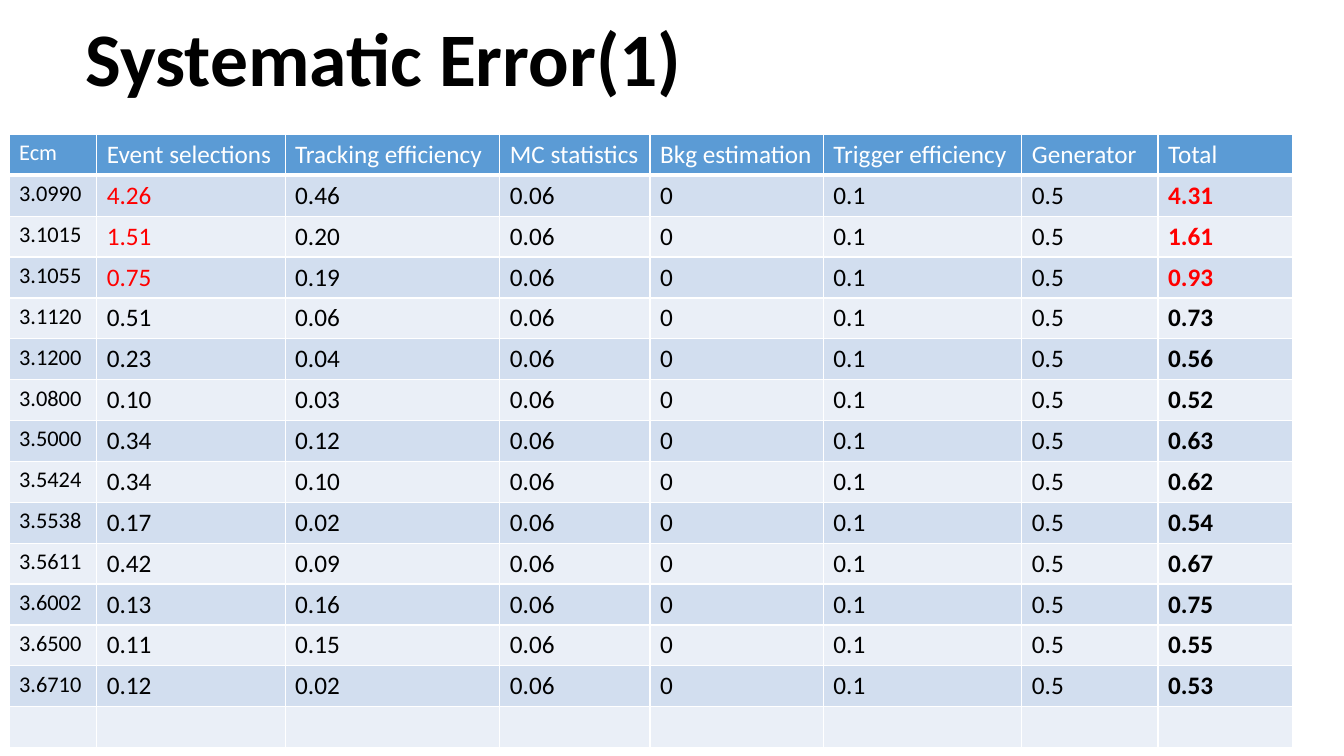
from lxml.etree import SubElement
from pptx import Presentation
from pptx.dml.color import RGBColor
from pptx.enum.text import MSO_ANCHOR as Anchor, PP_ALIGN as Align
from pptx.oxml.ns import qn
from pptx.util import Pt

WHITE = RGBColor(0xFF, 0xFF, 0xFF)
BLACK = RGBColor(0, 0, 0)
RED = RGBColor(0xFF, 0, 0)
HEADER_BLUE = RGBColor(0x5B, 0x9B, 0xD5)
BAND_DARK = RGBColor(0xD2, 0xDE, 0xEF)
BAND_LIGHT = RGBColor(0xEA, 0xEF, 0xF7)

COLUMNS = [
    ("Ecm", 62.6), ("Event selections", 134.6), ("Tracking efficiency", 153.4),
    ("MC statistics", 107.3), ("Bkg estimation", 123.8),
    ("Trigger efficiency", 141.8), ("Generator", 97.2), ("Total", 96.5),
]
COMMON_ERRORS = ["0.06", "0", "0.1", "0.5"]
ENERGY_POINTS = [
    ("3.0990", "4.26", "0.46", "4.31"),
    ("3.1015", "1.51", "0.20", "1.61"),
    ("3.1055", "0.75", "0.19", "0.93"),
    ("3.1120", "0.51", "0.06", "0.73"),
    ("3.1200", "0.23", "0.04", "0.56"),
    ("3.0800", "0.10", "0.03", "0.52"),
    ("3.5000", "0.34", "0.12", "0.63"),
    ("3.5424", "0.34", "0.10", "0.62"),
    ("3.5538", "0.17", "0.02", "0.54"),
    ("3.5611", "0.42", "0.09", "0.67"),
    ("3.6002", "0.13", "0.16", "0.75"),
    ("3.6500", "0.11", "0.15", "0.55"),
    ("3.6710", "0.12", "0.02", "0.53"),
]
HIGHLIGHTED_ROWS = range(1, 4)
ECM, SELECTION, TOTAL = 0, 1, len(COLUMNS) - 1


def write(frame, text, size=18, color=BLACK, bold=False, spacing=1.0):
    paragraph = frame.paragraphs[0]
    paragraph.alignment = Align.LEFT
    paragraph.line_spacing = spacing
    run = paragraph.add_run()
    run.text = text
    font = run.font
    font.name, font.size, font.bold = "Calibri", Pt(size), bold
    font.color.rgb = color


def add_borders(cell, top=1, bottom=1):
    properties = cell._tc.get_or_add_tcPr()
    for side, width in (("L", 1), ("R", 1), ("T", top), ("B", bottom)):
        line = SubElement(properties, qn(f"a:ln{side}"), w=str(Pt(width)))
        fill = SubElement(line, qn("a:solidFill"))
        SubElement(fill, qn("a:srgbClr"), val=str(WHITE))


def place_title(slide, left, top, width, height):
    title = slide.shapes.title
    title.left, title.top = Pt(left), Pt(top)
    title.width, title.height = Pt(width), Pt(height)
    title.text_frame.vertical_anchor = Anchor.MIDDLE
    write(title.text_frame, "Systematic Error(1)", size=54, bold=True, spacing=0.9)


def place_error_table(slide, left, top, width, height):
    rows = [[heading for heading, _ in COLUMNS]]
    rows += [[ecm, selection, tracking, *COMMON_ERRORS, total]
             for ecm, selection, tracking, total in ENERGY_POINTS]
    rows.append([""] * len(COLUMNS))
    table = slide.shapes.add_table(
        len(rows), len(COLUMNS), Pt(left), Pt(top), Pt(width), Pt(height)).table
    for column, (_, column_width) in zip(table.columns, COLUMNS):
        column.width = Pt(column_width)
    for r, values in enumerate(rows):
        table.rows[r].height = Pt(height / len(rows))
        band = HEADER_BLUE if r == 0 else BAND_DARK if r % 2 else BAND_LIGHT
        for c, value in enumerate(values):
            cell = table.cell(r, c)
            add_borders(cell, top=3 if r == 1 else 1, bottom=3 if r == 0 else 1)
            cell.fill.solid()
            cell.fill.fore_color.rgb = band
            highlighted = r in HIGHLIGHTED_ROWS and c in (SELECTION, TOTAL)
            if value:
                write(cell.text_frame, value, size=16 if c == ECM else 18,
                      color=WHITE if r == 0 else RED if highlighted else BLACK,
                      bold=r > 0 and c == TOTAL)


def main():
    deck = Presentation()
    deck.slide_width, deck.slide_height = Pt(960), Pt(540)
    slide = deck.slides.add_slide(deck.slide_layouts[5])
    place_title(slide, 54, 5, 828, 79.2)
    place_error_table(slide, 6.5, 96, sum(width for _, width in COLUMNS), 437.4)
    deck.save("out.pptx")


if __name__ == "__main__":
    main()
